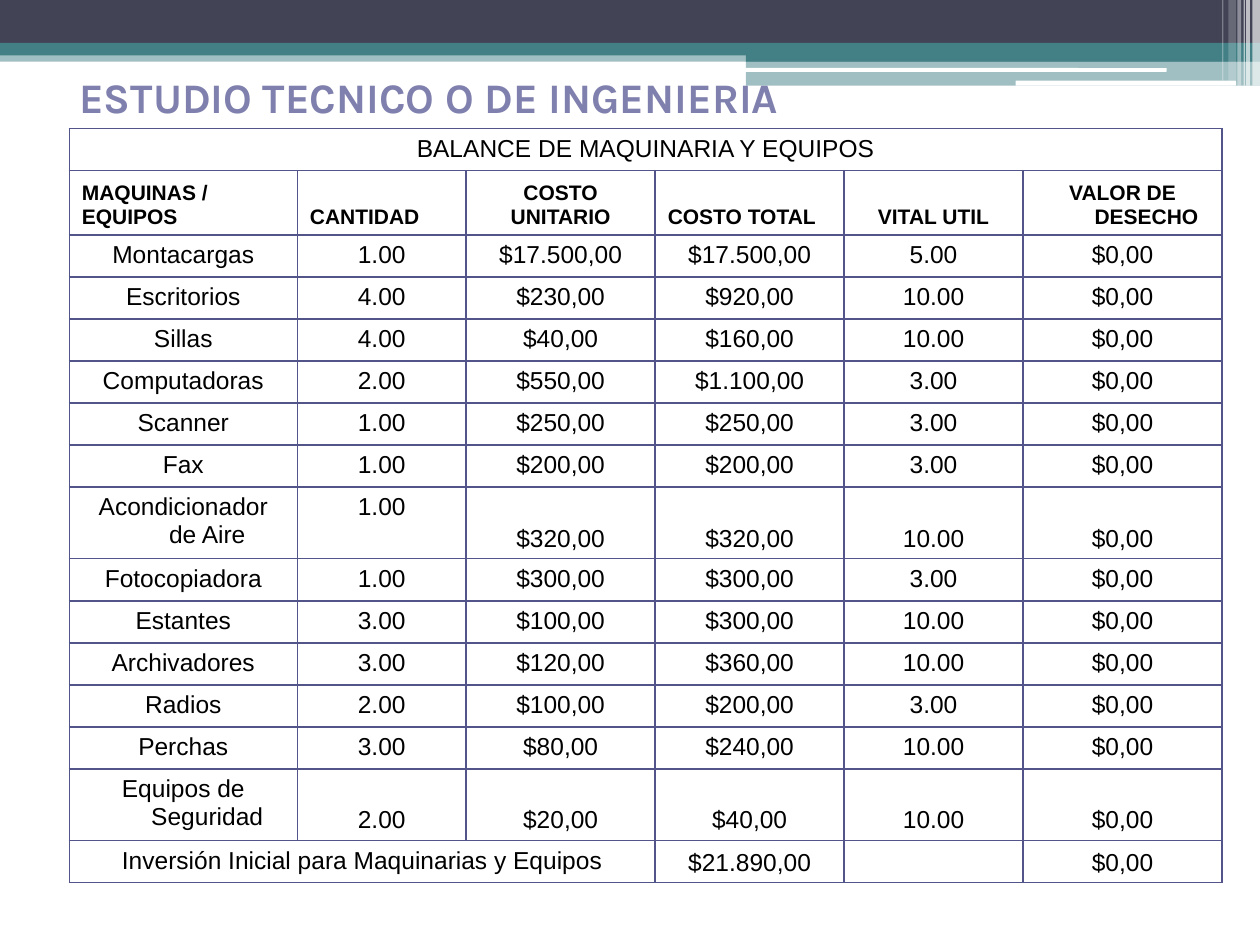
import pptx
import pptx.util
import pptx.dml.color
import pptx.enum.shapes
import pptx.enum.text
import pptx.oxml.ns
import lxml.etree

Inches = pptx.util.Inches
Pt = pptx.util.Pt
Color = pptx.dml.color.RGBColor.from_string
Align = pptx.enum.text.PP_ALIGN
Anchor = pptx.enum.text.MSO_ANCHOR
Preset = pptx.enum.shapes.MSO_SHAPE
qn = pptx.oxml.ns.qn

COLORS = {"navy": "424456", "teal": "438086", "white": "FFFFFF",
          "title": "8080AE", "border": "53548A", "text": "000000"}

presentation = pptx.Presentation()
presentation.slide_width = Inches(10)
presentation.slide_height = Inches(7.5)
slide = presentation.slides.add_slide(presentation.slide_layouts[6])

bands = [
    (0, 0.4, 10, 0.09, "teal", 50),
    (0, 0, 10, 0.34, "navy", 100),
    (0, 0.34, 10, 0.1, "teal", 100),
    (5.92, 0.39, 4.08, 0.1, "teal", 100),
    (5.92, 0.48, 4.08, 0.2, "teal", 50),
    (5.91, 0.54, 3.35, 0.03, "white", 100),
    (8.06, 0.64, 1.75, 0.04, "white", 100),
    (9.94, 0, 0.06, 0.68, "white", 65),
    (9.89, 0, 0.03, 0.68, "white", 65),
    (9.87, 0, 0.01, 0.68, "white", 60),
    (9.82, 0, 0.03, 0.68, "white", 40),
    (9.75, 0, 0.06, 0.64, "white", 20),
    (9.7, 0, 0.01, 0.64, "white", 30),
]
for left, top, width, height, color, opacity in bands:
    rounded = color == "white" and width > 1
    preset = Preset.ROUNDED_RECTANGLE if rounded else Preset.RECTANGLE
    band = slide.shapes.add_shape(preset, Inches(left), Inches(top), Inches(width), Inches(height))
    band.shadow.inherit = False
    band.line.fill.background()
    band.fill.solid()
    band.fill.fore_color.rgb = Color(COLORS[color])
    if opacity < 100:
        tint = band.fill._xPr.find(qn("a:solidFill"))[0]
        lxml.etree.SubElement(tint, qn("a:alpha")).set("val", str(opacity * 1000))

title = slide.shapes.add_textbox(0, 0, Inches(8.91), Inches(1.09))
frame = title.text_frame
frame.word_wrap = True
frame.vertical_anchor = Anchor.BOTTOM
frame.margin_left = Inches(0.63)
frame.margin_bottom = Inches(0.12)
paragraph = frame.paragraphs[0]
paragraph.text = "ESTUDIO TECNICO O DE INGENIERIA"
paragraph.font.name = "Karla"
paragraph.font.size = Pt(24)
paragraph.font.bold = True
paragraph.font.color.rgb = Color(COLORS["title"])

equipment = [
    ("Montacargas", "1.00", "17.500", "17.500", "5.00"),
    ("Escritorios", "4.00", "230", "920", "10.00"),
    ("Sillas", "4.00", "40", "160", "10.00"),
    ("Computadoras", "2.00", "550", "1.100", "3.00"),
    ("Scanner", "1.00", "250", "250", "3.00"),
    ("Fax", "1.00", "200", "200", "3.00"),
    ("Acondicionador de Aire", "1.00", "320", "320", "10.00"),
    ("Fotocopiadora", "1.00", "300", "300", "3.00"),
    ("Estantes", "3.00", "100", "300", "10.00"),
    ("Archivadores", "3.00", "120", "360", "10.00"),
    ("Radios", "2.00", "100", "200", "3.00"),
    ("Perchas", "3.00", "80", "240", "10.00"),
    ("Equipos de Seguridad", "2.00", "20", "40", "10.00"),
]
rows = [
    ["BALANCE DE MAQUINARIA Y EQUIPOS", "", "", "", "", ""],
    ["MAQUINAS / EQUIPOS", "CANTIDAD", "COSTO\nUNITARIO", "COSTO TOTAL", "VITAL UTIL", "VALOR DE DESECHO"],
]
for name, quantity, unit_cost, total_cost, life in equipment:
    rows.append([name, quantity, f"${unit_cost},00", f"${total_cost},00", life, "$0,00"])
rows.append(["Inversión Inicial para Maquinarias y Equipos", "", "", "$21.890,00", "", "$0,00"])

last = len(rows) - 1
row_heights = {1: 0.51, 2: 0.33, 8: 0.54, 14: 0.54, last: 0.33}
heights = [row_heights.get(index, 0.32) for index in range(len(rows))]
widths = [1.81, 1.34, 1.5, 1.5, 1.42, 1.58]
table = slide.shapes.add_table(len(rows), len(widths), Inches(0.55), Inches(1.02),
                               Inches(sum(widths)), Inches(sum(heights))).table
table.first_row = False
table.horz_banding = False
for column, width in zip(table.columns, widths):
    column.width = Inches(width)

for row_index, values in enumerate(rows):
    table.rows[row_index].height = Inches(heights[row_index])
    header = row_index == 1
    for column_index, value in enumerate(values):
        cell = table.cell(row_index, column_index)
        cell.text = value
        cell.fill.background()
        low = (header or row_index == 14 and column_index > 0
               or row_index == 8 and column_index > 1
               or row_index == last and column_index > 2)
        cell.vertical_anchor = Anchor.BOTTOM if low else Anchor.TOP
        for paragraph in cell.text_frame.paragraphs:
            paragraph.alignment = Align.LEFT if header and column_index in (0, 1, 3) else Align.CENTER
            paragraph.font.name = "Arial"
            paragraph.font.size = Pt(12 if header else 14)
            paragraph.font.bold = header
            paragraph.font.color.rgb = Color(COLORS["text"])
            if not (header and column_index == 0):
                properties = paragraph._p.get_or_add_pPr()
                properties.set("marL", str(Inches(0.38)))
                properties.set("indent", str(-Inches(0.38)))
        cell_properties = cell._tc.get_or_add_tcPr()
        for position, side in enumerate(("lnL", "lnR", "lnT", "lnB")):
            border = lxml.etree.Element(qn(f"a:{side}"), w=str(Pt(1)))
            fill = lxml.etree.SubElement(border, qn("a:solidFill"))
            lxml.etree.SubElement(fill, qn("a:srgbClr")).set("val", COLORS["border"])
            cell_properties.insert(position, border)

table.cell(0, 0).merge(table.cell(0, 5))
table.cell(last, 0).merge(table.cell(last, 2))

presentation.save("out.pptx")
